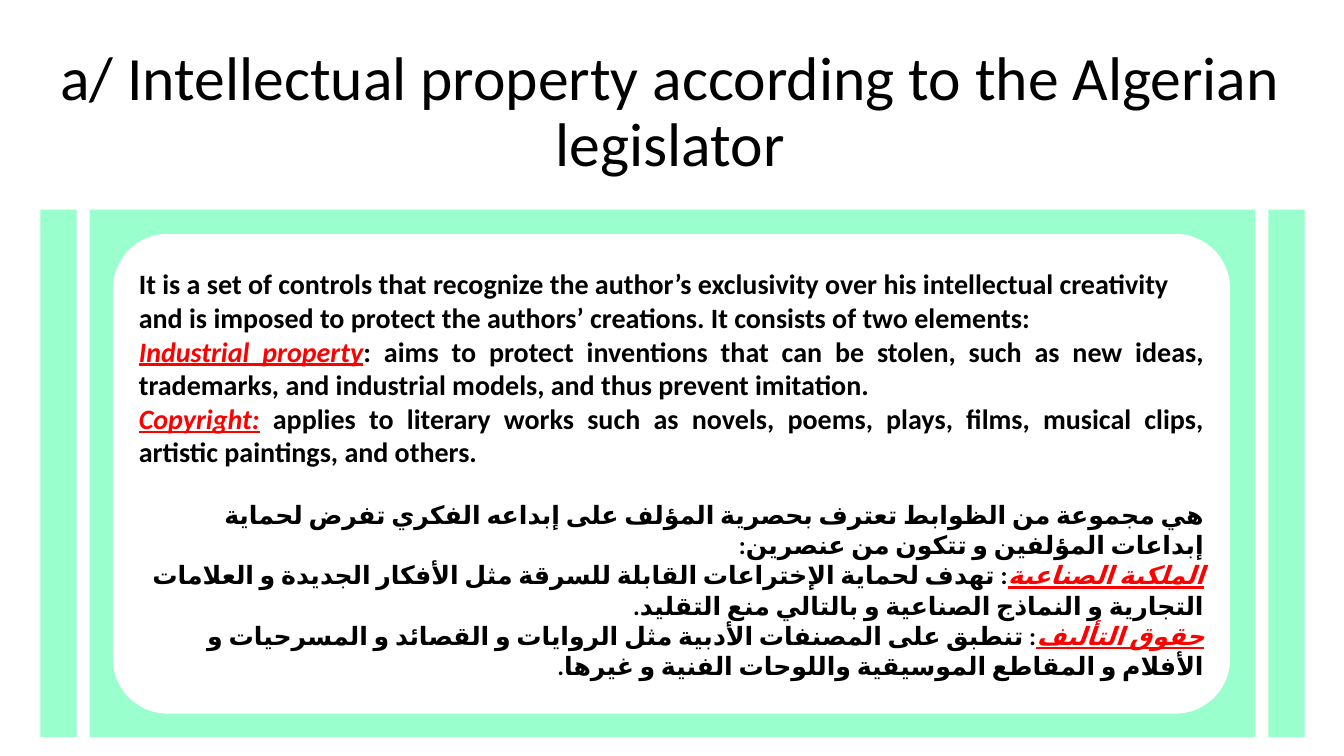
from lxml import etree
from pptx import Presentation
from pptx.dml.color import RGBColor
from pptx.enum import lang, shapes, text
from pptx.oxml import ns
from pptx.util import Inches, Pt

MINT = RGBColor(0x99, 0xFF, 0xCC)
WHITE = RGBColor(0xFF, 0xFF, 0xFF)
BLACK = RGBColor(0, 0, 0)
RED = RGBColor(0xFF, 0, 0)

FONT = "Calibri"
TOP, HIGH = 2.08, 5.23
TITLE = "a/ Intellectual property according to the Algerian legislator"

# Each paragraph is a red key term and the plain words after it
ENGLISH = [
    ("", "It is a set of controls that recognize the author’s exclusivity "
         "over his intellectual creativity "),
    ("", "and is imposed to protect the authors’ creations. "
         "It consists of two elements:"),
    ("Industrial property",
     ": aims to protect inventions that can be stolen, such as new ideas, "
     "trademarks, and industrial models, and thus prevent imitation."),
    ("Copyright:",
     " applies to literary works such as novels, poems, plays, films, "
     "musical clips, artistic paintings, and others."),
]
ARABIC = [
    ("", "هي مجموعة من الظوابط تعترف بحصرية المؤلف على إبداعه الفكري "
         "تفرض لحماية إبداعات المؤلفين و تتكون من عنصرين:"),
    ("الملكية الصناعية",
     ": تهدف لحماية الإختراعات القابلة للسرقة مثل الأفكار الجديدة "
     "و العلامات التجارية و النماذج الصناعية و بالتالي منع التقليد."),
    ("حقوق التأليف",
     ": تنطبق على المصنفات الأدبية مثل الروايات و القصائد و المسرحيات "
     "و الأفلام و المقاطع الموسيقية واللوحات الفنية و غيرها."),
]


def add_run(para, words, size, color=BLACK, rtl=False, **style):
    run = para.add_run()
    run.text = words
    form = {"name": FONT, "size": Pt(size), **style}
    for key, value in form.items():
        setattr(run.font, key, value)
    run.font.color.rgb = color
    if rtl:
        # Arabic letters take the complex-script font
        run.font.language_id = lang.MSO_LANGUAGE_ID.ARABIC_ALGERIA
        script = etree.SubElement(run._r.get_or_add_rPr(), ns.qn("a:cs"))
        script.set("typeface", FONT)


def add_block(slide, kind, box, color):
    block = slide.shapes.add_shape(kind, *map(Inches, box))
    block.shadow.inherit = False
    block.fill.solid()
    block.fill.fore_color.rgb = color
    block.line.fill.background()
    return block


def add_title(slide):
    box = slide.shapes.add_textbox(*map(Inches, (0.23, 0.42, 12.84, 1.66)))
    frame = box.text_frame
    frame.word_wrap = True
    frame.vertical_anchor = text.MSO_ANCHOR.TOP
    para = frame.paragraphs[0]
    para.alignment = text.PP_ALIGN.CENTER
    para.line_spacing = 0.9
    add_run(para, TITLE, 44)


def add_terms(frame, items, size, align, rtl=False, gap=0):
    for i, (term, words) in enumerate(items):
        first = frame.paragraphs[0]
        para = frame.add_paragraph() if first.runs else first
        para.alignment = align
        para.space_before = Pt(0 if i else gap)
        if rtl:
            para._p.get_or_add_pPr().set("rtl", "1")
        if term:
            add_run(para, term, size, RED, rtl, bold=True, italic=True,
                    underline=True)
        add_run(para, words, size, BLACK, rtl, bold=True)


def main():
    deck = Presentation()
    deck.slide_width, deck.slide_height = Inches(13.33), Inches(7.5)
    slide = deck.slides.add_slide(deck.slide_layouts[6])
    add_title(slide)

    # Green panel between two narrow bars
    for left, wide in ((0.4, 0.36), (0.89, 11.56), (12.58, 0.36)):
        add_block(slide, shapes.MSO_SHAPE.RECTANGLE,
                  (left, TOP, wide, HIGH), MINT)

    # White card with the text in both languages
    card = add_block(slide, shapes.MSO_SHAPE.ROUNDED_RECTANGLE,
                     (1.12, 2.32, 11.08, 4.76), WHITE)
    card.adjustments[0] = 0.114
    frame = card.text_frame
    frame.word_wrap = True
    frame.vertical_anchor = text.MSO_ANCHOR.MIDDLE
    add_terms(frame, ENGLISH, 20, text.PP_ALIGN.JUSTIFY)
    add_terms(frame, ARABIC, 18, text.PP_ALIGN.RIGHT, rtl=True, gap=22)

    deck.save("out.pptx")


if __name__ == "__main__":
    main()
